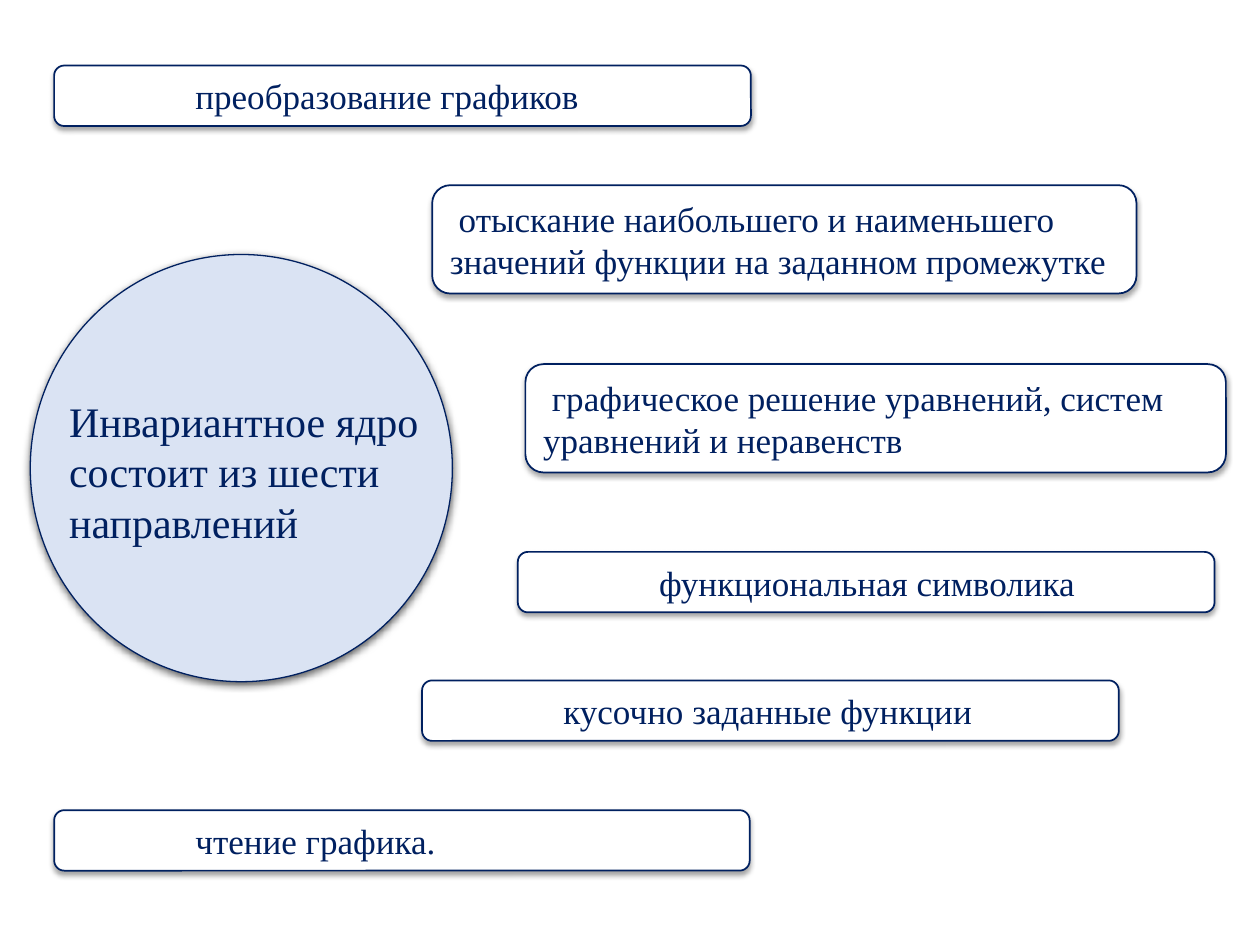
from lxml.etree import SubElement
from pptx import Presentation
from pptx.dml.color import RGBColor
from pptx.enum.shapes import MSO_SHAPE
from pptx.enum.text import MSO_ANCHOR, MSO_AUTO_SIZE, PP_ALIGN
from pptx.oxml.ns import qn
from pptx.util import Inches, Pt

NAVY = RGBColor(0x00, 0x20, 0x60)
PALE = RGBColor(0xDA, 0xE3, 0xF3)
WHITE = RGBColor(0xFF, 0xFF, 0xFF)
TAB, SPACE = 1, 0.07


def write(shape, text, size=20, indent=0, anchor=MSO_ANCHOR.MIDDLE):
    """Write one paragraph per line of text; indent (inches) is for the first."""
    frame = shape.text_frame
    frame.text = text
    frame.word_wrap = True
    frame.auto_size = MSO_AUTO_SIZE.SHAPE_TO_FIT_TEXT
    frame.vertical_anchor = anchor
    for para in frame.paragraphs:
        para.alignment = PP_ALIGN.LEFT
        para.font.size = Pt(size)
        para.font.name = "Times New Roman"
        para.font.color.rgb = NAVY
    if indent:
        props = frame.paragraphs[0]._p.get_or_add_pPr()
        props.set("marL", "0")
        props.set("indent", str(Inches(indent)))


def draw(kind, box, fill, line, blur, drop, alpha):
    """Add a navy-outlined shape with a soft shadow straight below it."""
    shape = slide.shapes.add_shape(kind, *map(Inches, box))
    shape.fill.solid()
    shape.fill.fore_color.rgb = fill
    shape.line.color.rgb = NAVY
    shape.line.width = Pt(line)
    shape.shadow.inherit = False
    effects = shape._element.spPr.find(qn("a:effectLst"))
    shadow = SubElement(effects, qn("a:outerShdw"), blurRad=str(Pt(blur)),
                        dist=str(Pt(drop)), dir="5400000", rotWithShape="0")
    color = SubElement(shadow, qn("a:srgbClr"), val="000000")
    SubElement(color, qn("a:alpha"), val=str(alpha * 1000))
    return shape


deck = Presentation()
deck.slide_width, deck.slide_height = Inches(10), Inches(7.5)
slide = deck.slides.add_slide(deck.slide_layouts[6])

topics = [
    (0.43, 0.52, 5.53, 0.48, TAB, "преобразование графиков"),
    (3.43, 1.47, 5.59, 0.86, SPACE,
     "отыскание наибольшего и наименьшего\n"
     "значений функции на заданном промежутке"),
    (4.17, 2.89, 5.56, 0.86, SPACE,
     "графическое решение уравнений, систем уравнений и неравенств"),
    (4.11, 4.38, 5.53, 0.48, TAB, "функциональная символика"),
    (3.35, 5.4, 5.53, 0.48, TAB, "кусочно заданные функции"),
    (0.43, 6.43, 5.52, 0.48, TAB, "чтение графика."),
]
for *box, indent, text in topics:
    topic = draw(MSO_SHAPE.ROUNDED_RECTANGLE, box, WHITE,
                 line=1, blur=3.1, drop=1.8, alpha=35)
    write(topic, text, indent=indent)

draw(MSO_SHAPE.OVAL, (0.24, 2.02, 3.35, 3.39), PALE,
     line=0.75, blur=4.5, drop=1.5, alpha=63)
core = slide.shapes.add_textbox(*map(Inches, (0.45, 3.09, 3.07, 1.31)))
write(core, "Инвариантное ядро\nсостоит из шести направлений",
      size=24, anchor=MSO_ANCHOR.TOP)

deck.save("out.pptx")
